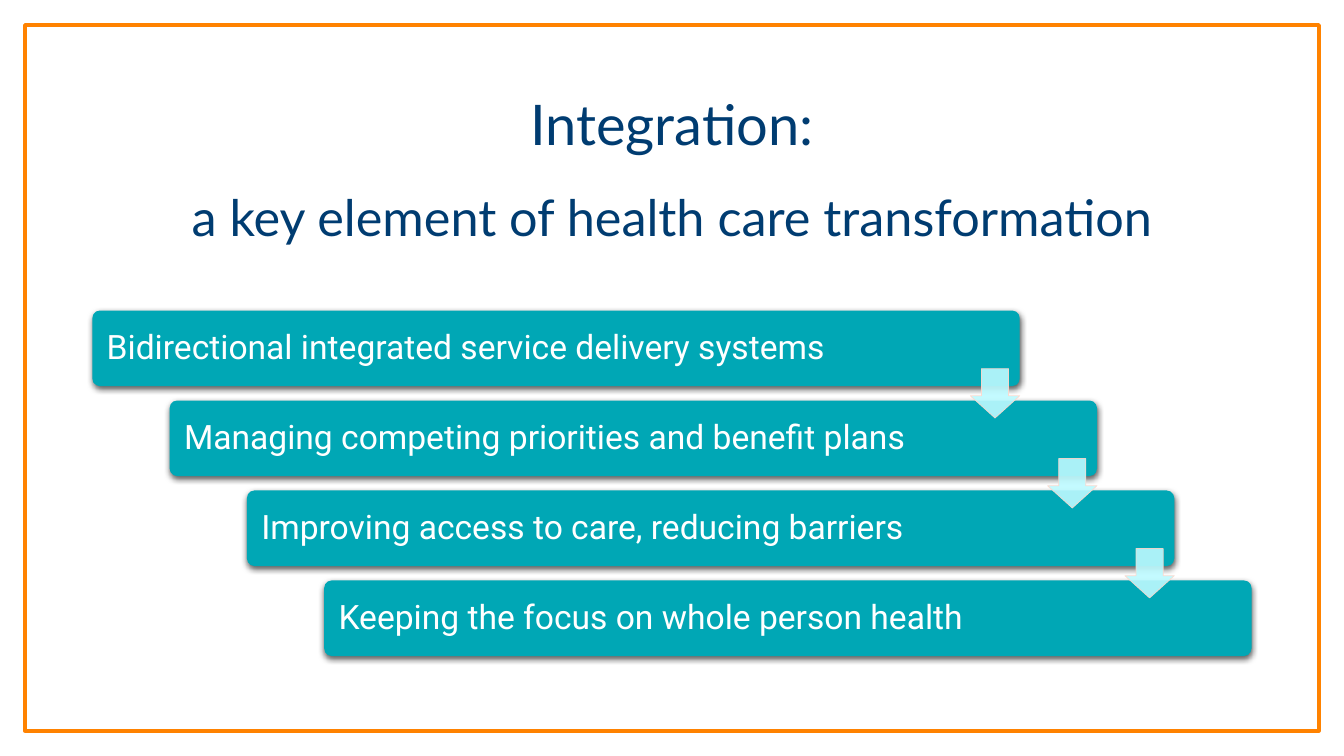
from dataclasses import dataclass

from lxml import etree
from pptx import Presentation
from pptx.dml.color import RGBColor
from pptx.enum.shapes import MSO_SHAPE
from pptx.enum.text import MSO_ANCHOR, MSO_AUTO_SIZE, PP_ALIGN
from pptx.oxml.ns import qn
from pptx.util import Pt

RECT, ROUNDED, DOWN = MSO_SHAPE.RECTANGLE, MSO_SHAPE.ROUNDED_RECTANGLE, MSO_SHAPE.DOWN_ARROW
CENTER, LEFT = PP_ALIGN.CENTER, PP_ALIGN.LEFT
BOTTOM, MIDDLE = MSO_ANCHOR.BOTTOM, MSO_ANCHOR.MIDDLE
NO_FIT = MSO_AUTO_SIZE.NONE


@dataclass(frozen=True)
class Theme:
    navy: str = "003C71"
    orange: str = "FF8200"
    teal: str = "00A7B5"
    ice: str = "BDFAFF"
    blush: str = "FFD8CC"
    white: str = "FFFFFF"
    heading_font: str = "Lato"
    step_font: str = "Roboto"
    title_size: int = 40
    subtitle_size: int = 36
    step_size: int = 24


THEME = Theme()

STEPS = [
    "Bidirectional integrated service delivery systems",
    "Managing competing priorities and benefit plans",
    "Improving access to care, reducing barriers",
    "Keeping the focus on whole person health",
]


def rgb(color):
    return RGBColor.from_string(color)


def add_text(sp, text, *, font, size, color, align, anchor, inset=7.2):
    tf = sp.text_frame
    tf.auto_size = NO_FIT
    tf.word_wrap = True
    tf.vertical_anchor = anchor
    tf.margin_left = tf.margin_right = Pt(inset)
    p = tf.paragraphs[0]
    p.alignment = align
    r = p.add_run()
    r.text = text
    r.font.name, r.font.size, r.font.color.rgb = font, Pt(size), rgb(color)


def add_box(slide, kind, x, y, w, h, *, fill=None, line=None, weight=1):
    sp = slide.shapes.add_shape(kind, Pt(x), Pt(y), Pt(w), Pt(h))
    sp.shadow.inherit = False
    if fill:
        sp.fill.solid()
        sp.fill.fore_color.rgb = rgb(fill)
    else:
        sp.fill.background()
    if line:
        sp.line.color.rgb = rgb(line)
        sp.line.width = Pt(weight)
    else:
        sp.line.fill.background()
    return sp


def set_alpha(color, percent):
    etree.SubElement(color, qn("a:alpha"), val=str(percent * 1000))


def add_shadow(sp, blur, distance, percent):
    effects = sp._element.spPr.find(qn("a:effectLst"))
    shadow = etree.SubElement(effects, qn("a:outerShdw"), blurRad=str(Pt(blur)),
                              dist=str(Pt(distance)), dir="5400000", rotWithShape="0")
    set_alpha(etree.SubElement(shadow, qn("a:srgbClr"), val="000000"), percent)


def add_frame(slide, x, y, w, h):
    add_box(slide, RECT, x, y, w, h, line=THEME.orange, weight=3)


def add_heading(slide, x, y, w, h, title, subtitle):
    title_h = h * 0.58
    heading = slide.shapes.title
    heading.left, heading.top, heading.width, heading.height = Pt(x), Pt(y), Pt(w), Pt(title_h)
    sub = slide.shapes.add_textbox(Pt(x), Pt(y + title_h), Pt(w), Pt(h - title_h))
    for sp, text, size in ((heading, title, THEME.title_size),
                           (sub, subtitle, THEME.subtitle_size)):
        add_text(sp, text, font=THEME.heading_font, size=size, color=THEME.navy,
                 align=CENTER, anchor=BOTTOM)


def add_staircase(slide, x, y, w, h, steps):
    bar_w, bar_h, arrow = w * 0.8, 54, 35.3
    step_x = (w - bar_w) / (len(steps) - 1)
    step_y = (h - bar_h) / (len(steps) - 1)

    # Bars, each set in from the one above
    for i, text in enumerate(steps):
        bar = add_box(slide, ROUNDED, x + i * step_x, y + i * step_y, bar_w, bar_h,
                      fill=THEME.teal)
        bar.adjustments[0] = 0.1
        add_shadow(bar, 4.5, 1.5, 63)
        add_text(bar, text, font=THEME.step_font, size=THEME.step_size, color=THEME.white,
                 align=LEFT, anchor=MIDDLE, inset=8.7)
        bar.text_frame.paragraphs[0].line_spacing = 0.9

    # Arrows, flush with the right end of the upper bar
    for i in range(len(steps) - 1):
        sp = add_box(slide, DOWN, x + i * step_x + bar_w - arrow, y + i * step_y + 41.5,
                     arrow, arrow, fill=THEME.ice, line=THEME.blush, weight=0.5)
        sp.adjustments[0], sp.adjustments[1] = 0.55, 0.45
        for color in sp._element.spPr.iter(qn("a:srgbClr")):
            set_alpha(color, 90)


def main():
    prs = Presentation()
    prs.slide_width, prs.slide_height = Pt(960), Pt(540)
    slide = prs.slides.add_slide(prs.slide_layouts[5])
    add_frame(slide, 18, 18, 924, 504)
    add_heading(slide, 66, 26, 828, 154, "Integration:",
                "a key element of health care transformation")
    add_staircase(slide, 66, 221.8, 828, 246.8, STEPS)
    prs.save("out.pptx")


if __name__ == "__main__":
    main()
